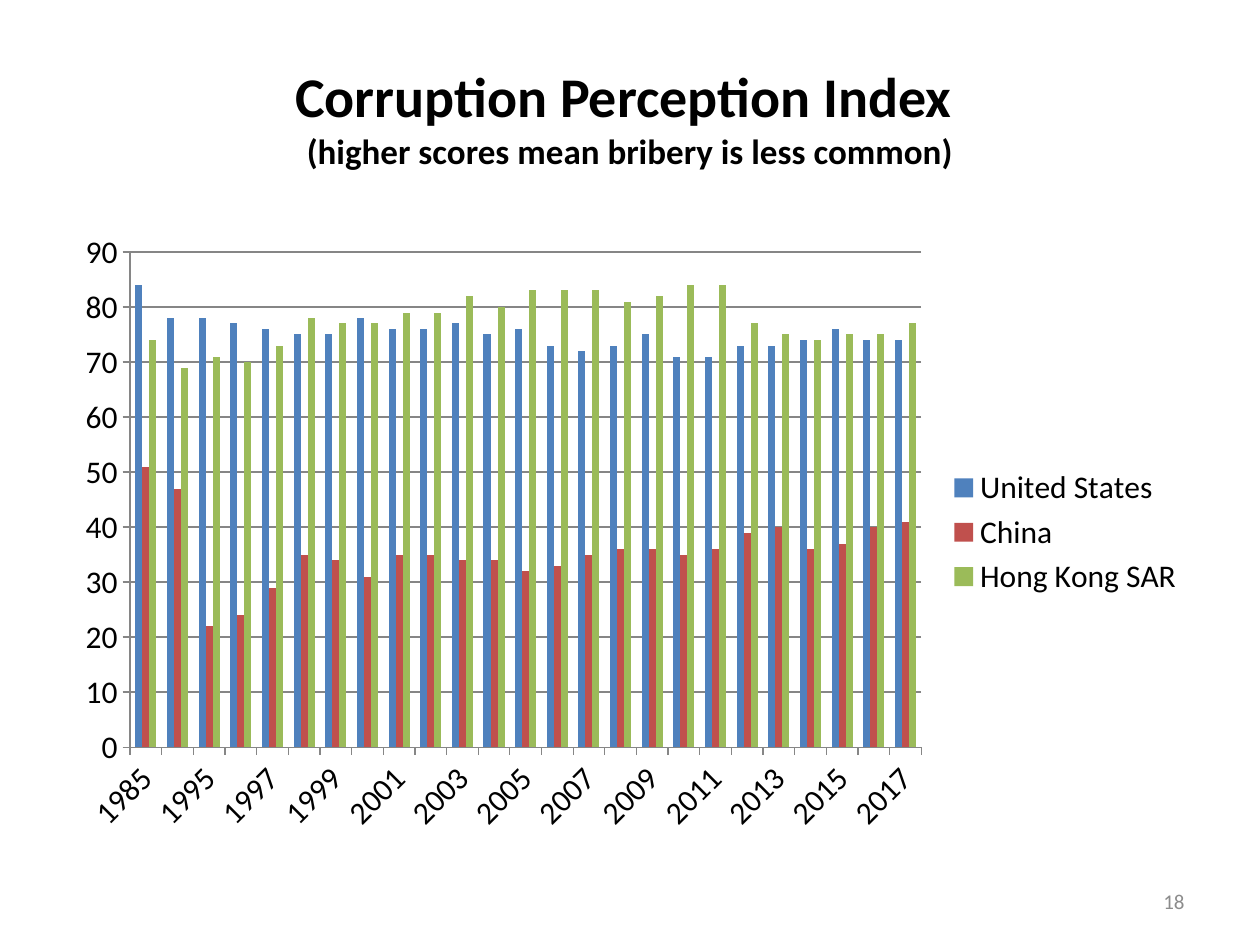
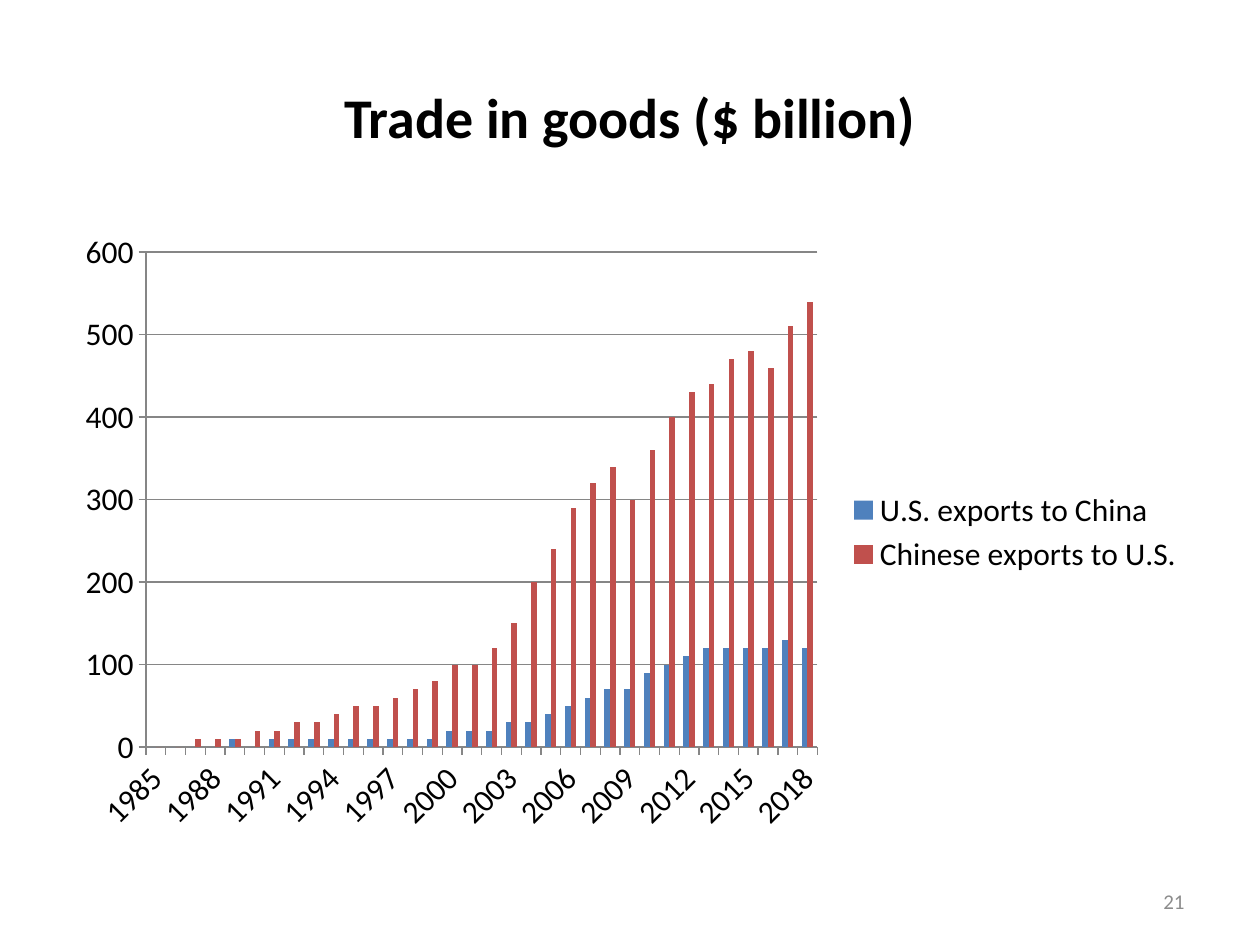
from pptx import Presentation
from pptx.chart.data import CategoryChartData
from pptx.dml.color import RGBColor
from pptx.enum.chart import XL_CHART_TYPE, XL_LEGEND_POSITION, XL_TICK_MARK
from pptx.enum.text import MSO_ANCHOR, PP_ALIGN
from pptx.util import Inches, Pt

FONT = "Calibri"
BLACK, GREY, AXIS_GREY = "000000", "8C8C8C", "868686"
BLUE, RED, GREEN = "4F81BD", "C0504D", "9BBB59"


def color(hex_value):
    return RGBColor.from_string(hex_value)


def style_font(font, size, hex_value=BLACK, bold=False):
    for name, value in {"name": FONT, "size": Pt(size), "bold": bold}.items():
        setattr(font, name, value)
    font.color.rgb = color(hex_value)


class Deck:
    """Holds the shared style and the slide being built."""

    def __init__(self):
        self.presentation = Presentation()
        self.presentation.slide_width = Inches(10)
        self.presentation.slide_height = Inches(7.5)
        self.slide = None

    def add_slide(self, number):
        layout = self.presentation.slide_layouts[6]
        self.slide = self.presentation.slides.add_slide(layout)
        self.add_text((7.17, 6.95, 2.33, 0.4), [(str(number), 12)], PP_ALIGN.RIGHT, GREY)

    def add_text(self, box, lines, alignment, hex_value=BLACK, bold=False):
        """Write (text, size) lines as one paragraph with line breaks."""
        frame = self.slide.shapes.add_textbox(*map(Inches, box)).text_frame
        frame.word_wrap = True
        frame.vertical_anchor = MSO_ANCHOR.MIDDLE
        paragraph = frame.paragraphs[0]
        paragraph.alignment = alignment
        for index, (text, size) in enumerate(lines):
            if index:
                paragraph.add_line_break()
            run = paragraph.add_run()
            run.text = text
            style_font(run.font, size, hex_value, bold)

    def add_title(self, title, subtitle=None):
        lines = [(title, 32)]
        if subtitle:
            lines.append((subtitle, 20))
        self.add_text((0.5, 0.3, 9, 1.25), lines, PP_ALIGN.CENTER, bold=True)

    def add_column_chart(self, years, series, maximum, step):
        """Draw clustered columns; series maps a name to (colour, values)."""
        data = CategoryChartData()
        data.categories = [str(year) for year in years]
        for name, (_, values) in series.items():
            data.add_series(name, values)
        box = map(Inches, (0.5, 1.75, 9, 4.95))
        chart = self.slide.shapes.add_chart(XL_CHART_TYPE.COLUMN_CLUSTERED, *box, data).chart
        chart.has_title = False
        style_font(chart.font, 18)
        chart.has_legend = True
        chart.legend.position = XL_LEGEND_POSITION.RIGHT
        chart.legend.include_in_layout = False

        plot = chart.plots[0]
        plot.gap_width = 150
        plot.overlap = 0
        plot.vary_by_categories = False
        for column, (hex_value, _) in zip(plot.series, series.values()):
            column.invert_if_negative = False
            column.format.fill.solid()
            column.format.fill.fore_color.rgb = color(hex_value)

        value_axis = chart.value_axis
        axis_format = {"minimum_scale": 0, "maximum_scale": maximum, "major_unit": step,
                       "has_major_gridlines": True}
        for name, value in axis_format.items():
            setattr(value_axis, name, value)
        for axis in (chart.category_axis, value_axis):
            axis.major_tick_mark = XL_TICK_MARK.OUTSIDE
            axis.minor_tick_mark = XL_TICK_MARK.NONE
        for part in (chart.category_axis, value_axis, value_axis.major_gridlines):
            part.format.line.width = Pt(0.75)
            part.format.line.color.rgb = color(AXIS_GREY)


def add_corruption_slide(deck):
    deck.add_slide(18)
    deck.add_title("Corruption Perception Index ", "(higher scores mean bribery is less common)")
    deck.add_column_chart([1985, 1992, *range(1995, 2018)], {
        "United States": (BLUE, [
            84, 78, 78, 77, 76, 75, 75, 78, 76, 76, 77, 75, 76,
            73, 72, 73, 75, 71, 71, 73, 73, 74, 76, 74, 74]),
        "China": (RED, [
            51, 47, 22, 24, 29, 35, 34, 31, 35, 35, 34, 34, 32,
            33, 35, 36, 36, 35, 36, 39, 40, 36, 37, 40, 41]),
        "Hong Kong SAR": (GREEN, [
            74, 69, 71, 70, 73, 78, 77, 77, 79, 79, 82, 80, 83,
            83, 83, 81, 82, 84, 84, 77, 75, 74, 75, 75, 77]),
    }, maximum=90, step=10)


def add_trade_slide(deck):
    deck.add_slide(21)
    deck.add_title("Trade in goods ($ billion)")
    deck.add_column_chart(range(1985, 2019), {
        "U.S. exports to China": (BLUE, [
            0, 0, 0, 0, 10, 0, 10, 10, 10, 10, 10, 10, 10, 10, 10, 20, 20,
            20, 30, 30, 40, 50, 60, 70, 70, 90, 100, 110, 120, 120, 120, 120, 130, 120]),
        "Chinese exports to U.S.": (RED, [
            0, 0, 10, 10, 10, 20, 20, 30, 30, 40, 50, 50, 60, 70, 80, 100, 100,
            120, 150, 200, 240, 290, 320, 340, 300, 360, 400, 430, 440, 470, 480, 460, 510, 540]),
    }, maximum=600, step=100)


def main():
    deck = Deck()
    add_corruption_slide(deck)
    add_trade_slide(deck)
    deck.presentation.save("out.pptx")


if __name__ == "__main__":
    main()
